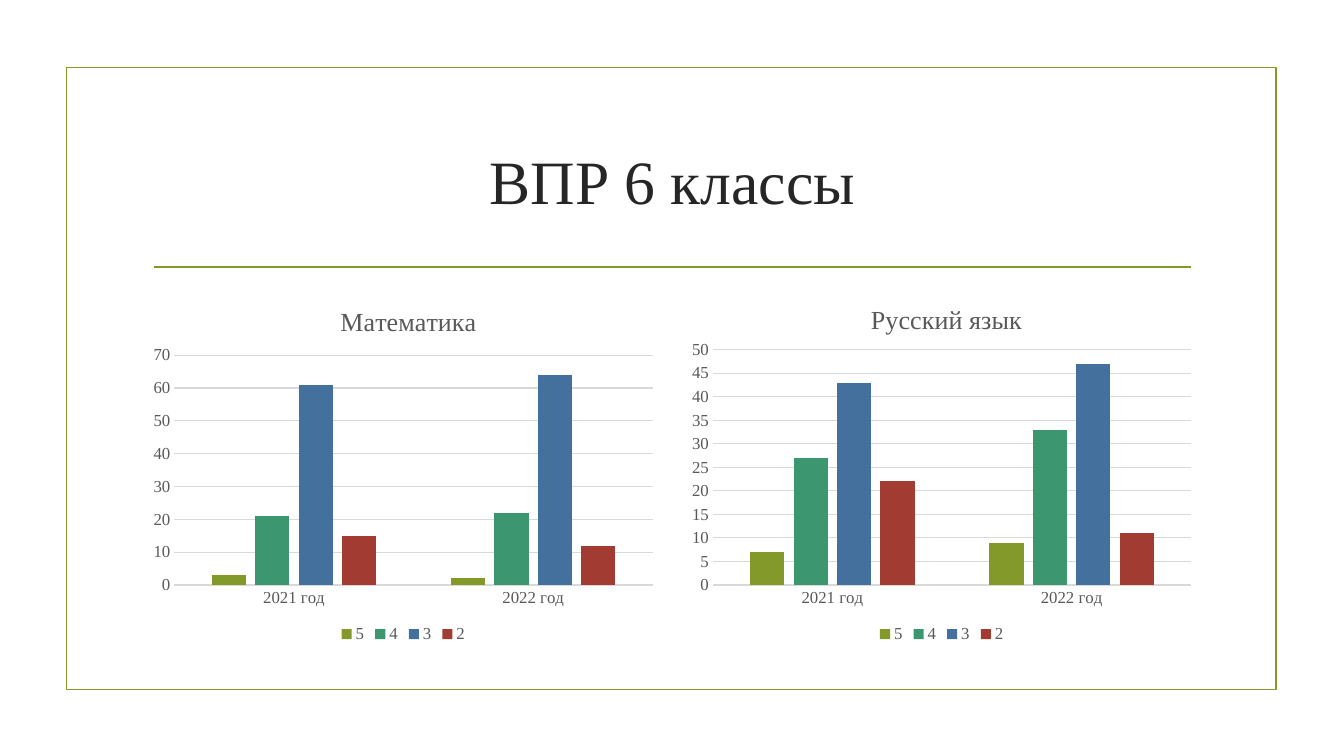
from lxml.etree import SubElement
from pptx import Presentation
from pptx.chart.data import CategoryChartData
from pptx.dml.color import RGBColor
from pptx.enum.chart import XL_CHART_TYPE, XL_LEGEND_POSITION, XL_TICK_MARK
from pptx.enum.shapes import MSO_CONNECTOR, MSO_SHAPE
from pptx.enum.text import MSO_ANCHOR, PP_ALIGN
from pptx.oxml.ns import qn
from pptx.util import Inches, Pt

TITLE = "ВПР 6 классы"
YEARS = ["2021 год", "2022 год"]
GRADE_COLORS = {"5": "83992A", "4": "3C9770", "3": "44709D", "2": "A23C33"}
SUBJECTS = [
    {"name": "Математика", "grades": [(3, 2), (21, 22), (61, 64), (15, 12)],
     "maximum": 70, "step": 10, "title_at": (0.37, 0.05), "plot_at": (0.06, 0.2, 0.92, 0.63)},
    {"name": "Русский язык", "grades": [(7, 9), (27, 33), (43, 47), (22, 11)],
     "maximum": 50, "step": 5, "title_at": (0.355, 0.045), "plot_at": (0.06, 0.185, 0.92, 0.645)},
]
FONT = "Times New Roman"
ACCENT, INK, GRAY, GRID = "83992A", "262626", "595959", "D9D9D9"
LEFT, CHART_TOP, CHART_WIDTH, CHART_HEIGHT, GAP = 1.42, 2.8, 5.16, 3.62, 0.18


def color(code):
    return RGBColor.from_string(code)


def style_font(font, size, code):
    font.name, font.size, font.bold = FONT, Pt(size), False
    font.color.rgb = color(code)


def style_line(line, code, width):
    line.color.rgb = color(code)
    line.width = Pt(width)


def write(frame, text, size, code, align=PP_ALIGN.CENTER):
    para = frame.paragraphs[0]
    para.alignment = align
    span = para.add_run()
    span.text = text
    style_font(span.font, size, code)


def place(element, index, fractions, inner=False):
    for old in element.findall(qn("c:layout")):
        element.remove(old)
    layout = SubElement(element, qn("c:layout"))
    element.insert(index, layout)
    manual = SubElement(layout, qn("c:manualLayout"))
    settings = [("layoutTarget", "inner")] if inner else []
    settings += [("xMode", "edge"), ("yMode", "edge")]
    settings += zip("xywh", fractions)
    for tag, value in settings:
        SubElement(manual, qn("c:" + tag)).set("val", str(value))


def add_subject_chart(page, subject, left):
    data = CategoryChartData()
    data.categories = YEARS
    for grade, values in zip(GRADE_COLORS, subject["grades"]):
        data.add_series(grade, values)
    chart = page.shapes.add_chart(
        XL_CHART_TYPE.COLUMN_CLUSTERED, Inches(left), Inches(CHART_TOP),
        Inches(CHART_WIDTH), Inches(CHART_HEIGHT), data).chart
    style_font(chart.font, 10, "000000")

    chart.has_title = True
    write(chart.chart_title.text_frame, subject["name"], 18.6, GRAY)
    chart.chart_title.include_in_layout = False
    place(chart.chart_title._element, 1, subject["title_at"])
    place(chart._chartSpace.chart.plotArea, 0, subject["plot_at"], inner=True)

    chart.has_legend = True
    chart.legend.position = XL_LEGEND_POSITION.BOTTOM
    chart.legend.include_in_layout = False
    style_font(chart.legend.font, 12, GRAY)

    for axis in (chart.category_axis, chart.value_axis):
        axis.major_tick_mark = axis.minor_tick_mark = XL_TICK_MARK.NONE
        style_font(axis.tick_labels.font, 12, GRAY)
    style_line(chart.category_axis.format.line, GRID, 0.75)
    scale = chart.value_axis
    scale.format.line.fill.background()
    scale.minimum_scale, scale.maximum_scale = 0, subject["maximum"]
    scale.major_unit = subject["step"]
    style_line(scale.major_gridlines.format.line, GRID, 0.75)

    plot = chart.plots[0]
    plot.gap_width, plot.overlap, plot.vary_by_categories = 219, -27, False
    for series, code in zip(plot.series, GRADE_COLORS.values()):
        series.format.fill.solid()
        series.format.fill.fore_color.rgb = color(code)


def main():
    deck = Presentation()
    deck.slide_width, deck.slide_height = Inches(13.33), Inches(7.5)
    page = deck.slides.add_slide(deck.slide_layouts[6])

    border = page.shapes.add_shape(
        MSO_SHAPE.RECTANGLE, Inches(0.66), Inches(0.67), Inches(12), Inches(6.17))
    border.shadow.inherit = False
    border.fill.background()
    style_line(border.line, ACCENT, 1.25)

    rule = page.shapes.add_connector(
        MSO_CONNECTOR.STRAIGHT, Inches(1.53), Inches(2.65), Inches(11.81), Inches(2.65))
    SubElement(rule._element.spPr, qn("a:effectLst"))
    style_line(rule.line, ACCENT, 1.25)

    box = page.shapes.add_textbox(Inches(LEFT), Inches(1.07), Inches(10.5), Inches(1.43))
    box.text_frame.word_wrap = True
    box.text_frame.vertical_anchor = MSO_ANCHOR.MIDDLE
    write(box.text_frame, TITLE, 44, INK)

    for index, subject in enumerate(SUBJECTS):
        add_subject_chart(page, subject, LEFT + index * (CHART_WIDTH + GAP))

    deck.save("out.pptx")


if __name__ == "__main__":
    main()
